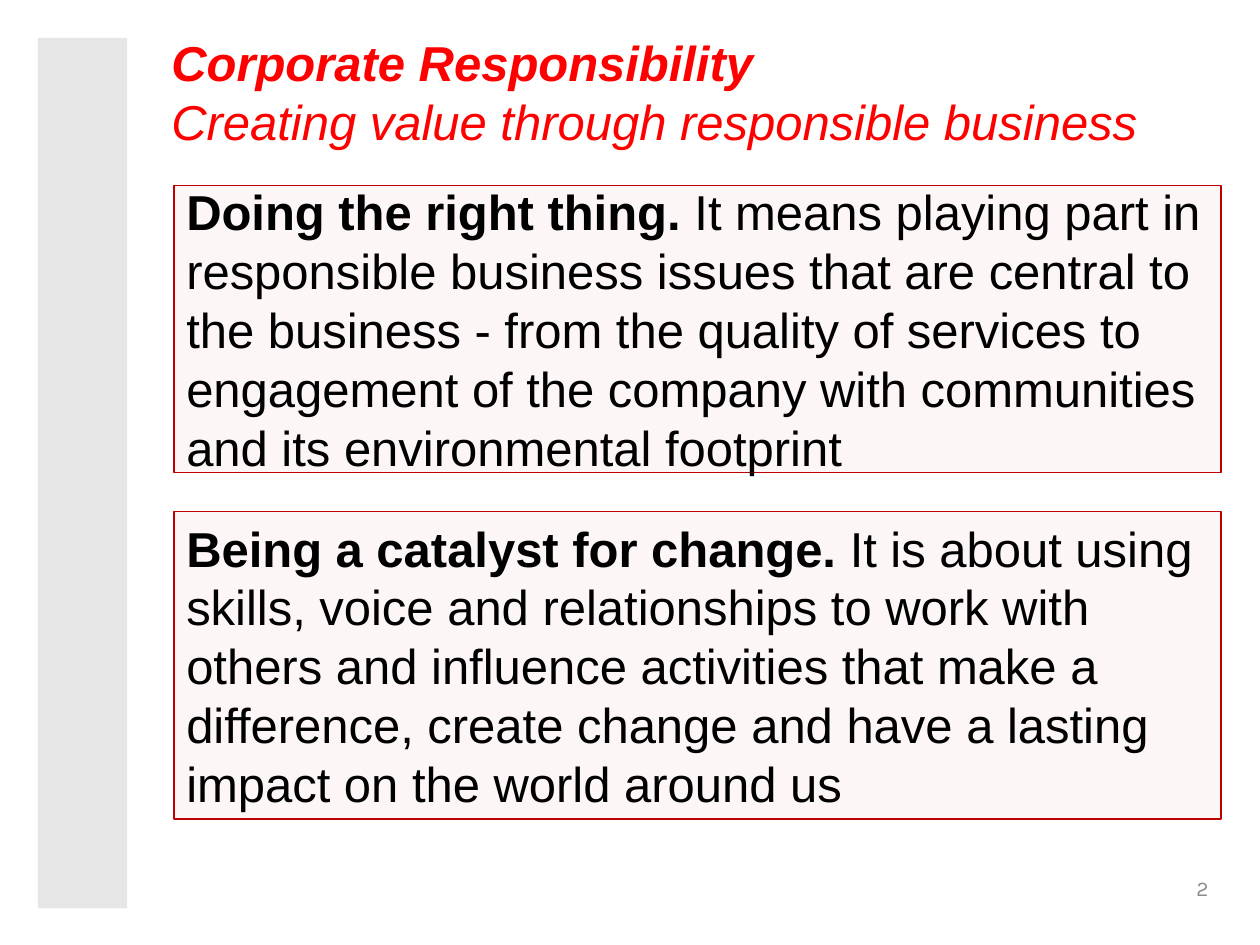
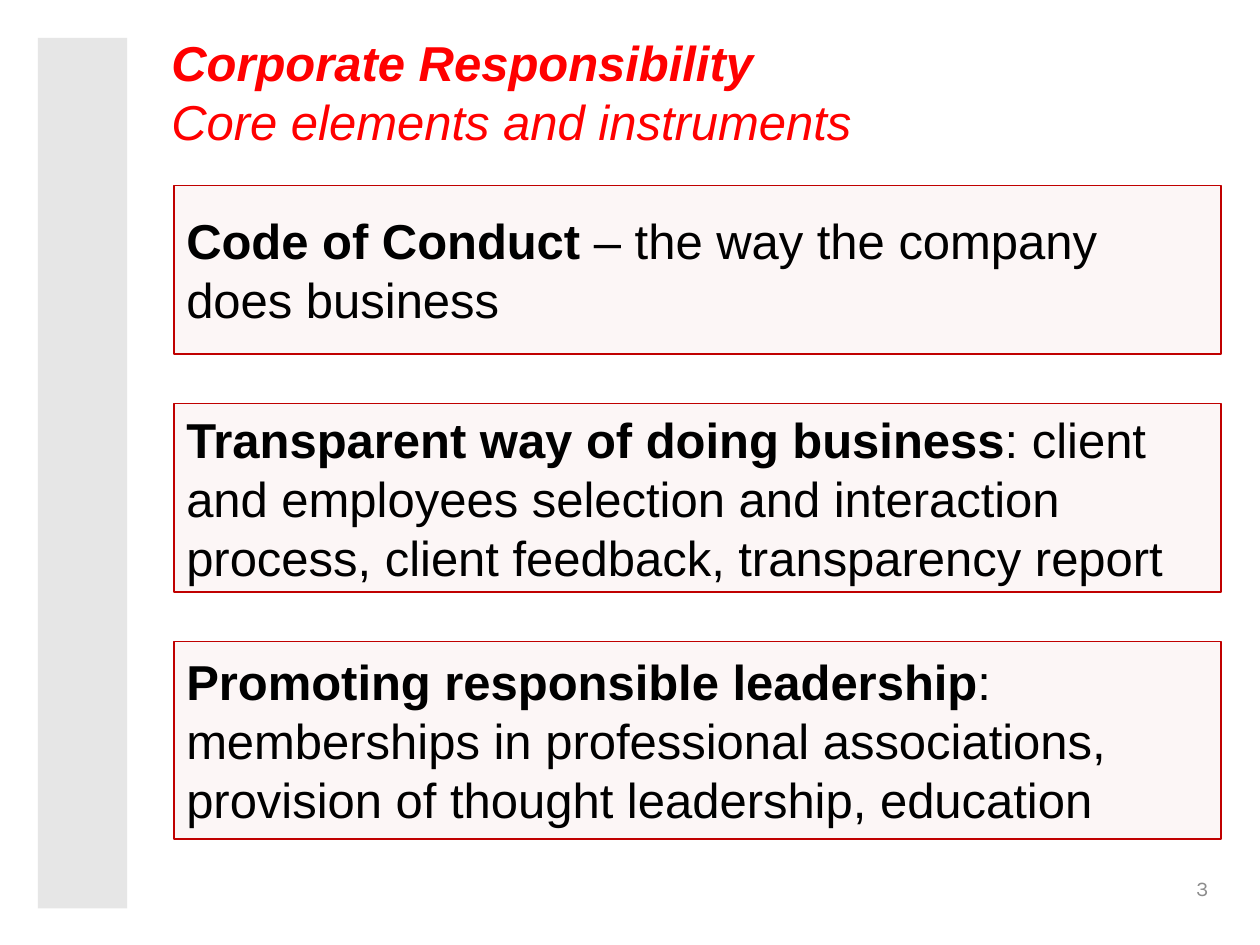
"""Build two corporate responsibility slides with framed statements."""
from pptx import Presentation
from pptx.dml.color import RGBColor
from pptx.enum.shapes import MSO_SHAPE
from pptx.enum.text import MSO_ANCHOR, MSO_AUTO_SIZE, PP_ALIGN
from pptx.util import Inches, Pt

RED, FRAME, PANEL, BAND, BLACK, GREY = "FF0000", "C00000", "FCF6F6", "E6E6E6", "000000", "8C8C8C"

SLIDES = [
    ("Creating value through responsible business", [
        (1.47, 2.28, "Doing the right thing.",
         " It means playing part in responsible business issues that are central to the business"
         " - from the quality of services to engagement of the company with communities"
         " and its environmental footprint"),
        (4.06, 2.44, "Being a catalyst for change. ",
         "It is about using skills, voice and relationships to work with others and influence"
         " activities that make a difference, create change and have a lasting impact"
         " on the world around us"),
    ]),
    ("Core elements and instruments", [
        (1.47, 1.34, "Code of Conduct", " – the way the company does business"),
        (3.2, 1.5, "Transparent way of doing business",
         ": client and employees selection and interaction process, client feedback,"
         " transparency report"),
        (5.09, 1.57, "Promoting responsible leadership",
         ": memberships in professional associations, provision of thought leadership, education"),
    ]),
]


def add_run(p, text, color, size=28, name="Arial", bold=False, italic=False):
    """Append a formatted run to a paragraph."""
    r = p.add_run()
    r.text = text
    r.font.size, r.font.name = Pt(size), name
    r.font.bold, r.font.italic = bold, italic
    r.font.color.rgb = RGBColor.from_string(color)


def add_rect(s, left, top, width, height, fill, line=None):
    """Add a flat rectangle, framed if a line colour is given."""
    sp = s.shapes.add_shape(MSO_SHAPE.RECTANGLE, Inches(left), Inches(top),
                            Inches(width), Inches(height))
    sp.shadow.inherit = False
    sp.fill.solid()
    sp.fill.fore_color.rgb = RGBColor.from_string(fill)
    if line:
        sp.line.color.rgb = RGBColor.from_string(line)
        sp.line.width = Pt(0.75)
    else:
        sp.line.fill.background()
    return sp


prs = Presentation()
prs.slide_width, prs.slide_height = Inches(10), Inches(7.5)

for number, (subtitle, statements) in enumerate(SLIDES, start=2):
    s = prs.slides.add_slide(prs.slide_layouts[5])
    add_rect(s, 0.3, 0.3, 0.71, 6.91, BAND)

    title = s.shapes.title
    title.left, title.top = Inches(1.26), Inches(0.21)
    title.width, title.height = Inches(8.74), Inches(1.02)
    tf = title.text_frame
    tf.vertical_anchor = MSO_ANCHOR.TOP
    tf.auto_size = MSO_AUTO_SIZE.NONE
    p = tf.paragraphs[0]
    p.alignment = PP_ALIGN.LEFT
    add_run(p, "Corporate Responsibility", RED, bold=True, italic=True)
    p.add_line_break()
    add_run(p, subtitle, RED, italic=True)

    for top, height, lead, body in statements:
        sp = add_rect(s, 1.38, top, 8.31, height, PANEL, FRAME)
        tf = sp.text_frame
        tf.word_wrap = True
        tf.vertical_anchor = MSO_ANCHOR.MIDDLE
        p = tf.paragraphs[0]
        p.alignment = PP_ALIGN.LEFT
        add_run(p, lead, BLACK, bold=True)
        add_run(p, body, BLACK)

    tf = s.shapes.add_textbox(Inches(9.22), Inches(6.85), Inches(0.47), Inches(0.4)).text_frame
    tf.word_wrap = True
    tf.vertical_anchor = MSO_ANCHOR.MIDDLE
    p = tf.paragraphs[0]
    p.alignment = PP_ALIGN.RIGHT
    add_run(p, str(number), GREY, size=12, name="Karla")

prs.save("out.pptx")
